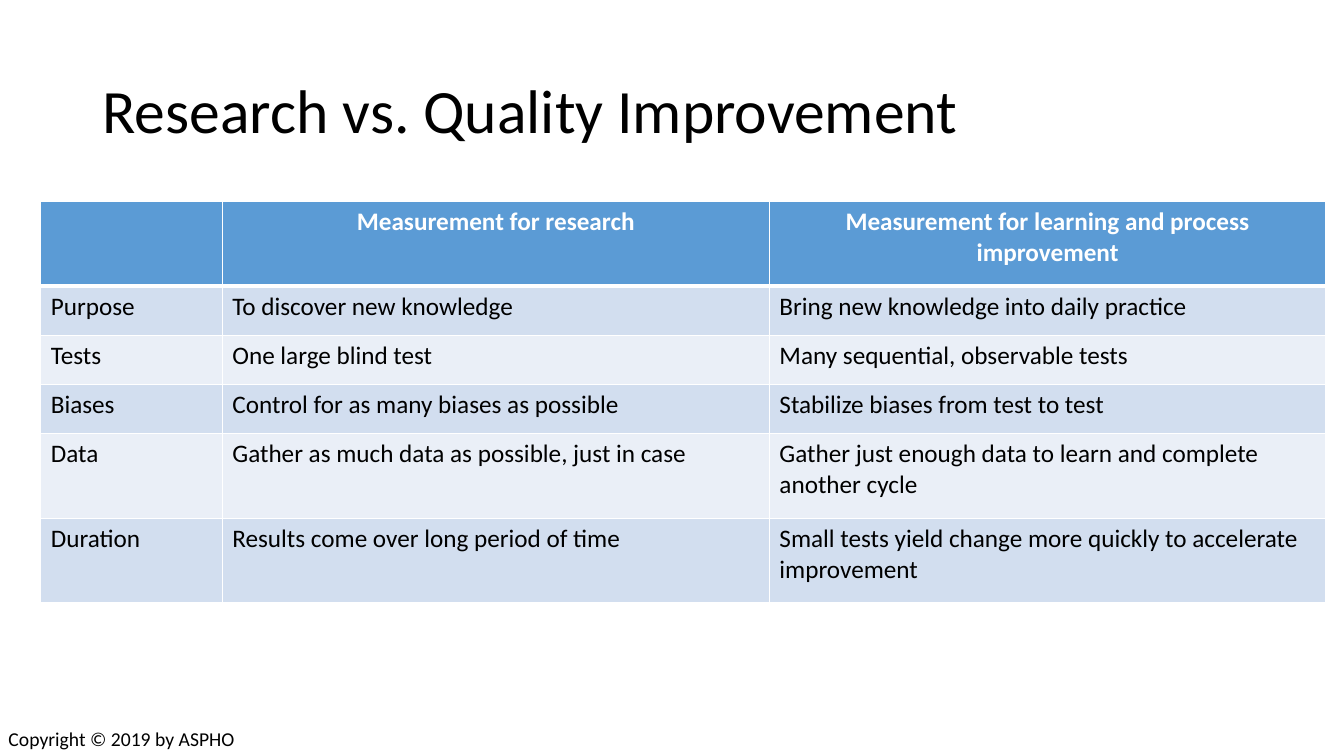
from dataclasses import dataclass

from lxml.etree import SubElement
from pptx import Presentation
from pptx.dml.color import RGBColor
from pptx.enum.text import MSO_ANCHOR, MSO_AUTO_SIZE, PP_ALIGN
from pptx.oxml.ns import qn
from pptx.slide import Slide
from pptx.table import _Cell
from pptx.text.text import _Paragraph
from pptx.util import Pt


@dataclass(frozen=True)
class Theme:
    font: str = "Calibri"
    text: str = "000000"
    header_text: str = "FFFFFF"
    header_fill: str = "5B9BD5"
    bands: tuple[str, str] = ("D2DEEF", "EAEFF7")
    border: str = "FFFFFF"
    title_size: float = 44
    table_size: float = 18
    footer_size: float = 14
    thin_border: float = 1
    thick_border: float = 3


@dataclass(frozen=True)
class Box:
    left: float
    top: float
    width: float
    height: float

    def lengths(self) -> tuple[Pt, Pt, Pt, Pt]:
        return Pt(self.left), Pt(self.top), Pt(self.width), Pt(self.height)


@dataclass(frozen=True)
class ComparisonRow:
    height: float
    aspect: str
    research: str
    improvement: str


THEME = Theme()
TITLE_BOX = Box(66, 28.8, 828, 104.4)
TABLE_BOX = Box(29.1, 144, 918, 287.2)
FOOTER_BOX = Box(-1, 515.7, 180, 24.3)
COLUMN_WIDTHS = (129.7, 390.8, 397.5)
ONE_LINE, TWO_LINES = 35.1, 60.5
ROWS = (
    ComparisonRow(TWO_LINES, "", "Measurement for research",
                  "Measurement for learning and process improvement"),
    ComparisonRow(ONE_LINE, "Purpose", "To discover new knowledge",
                  "Bring new knowledge into daily practice"),
    ComparisonRow(ONE_LINE, "Tests", "One large blind test",
                  "Many sequential, observable tests"),
    ComparisonRow(ONE_LINE, "Biases", "Control for as many biases as possible",
                  "Stabilize biases from test to test"),
    ComparisonRow(TWO_LINES, "Data", "Gather as much data as possible, just in case",
                  "Gather just enough data to learn and complete another cycle"),
    ComparisonRow(TWO_LINES, "Duration", "Results come over long period of time",
                  "Small tests yield change more quickly to accelerate improvement"),
)


def add_run(paragraph: _Paragraph, text: str, size: float,
            color: str = THEME.text, bold: bool = False) -> None:
    run = paragraph.add_run()
    run.text = text
    run.font.name = THEME.font
    run.font.size = Pt(size)
    run.font.bold = bold
    run.font.color.rgb = RGBColor.from_string(color)


def set_borders(cell: _Cell, top: float, bottom: float) -> None:
    properties = cell._tc.get_or_add_tcPr()
    thin = THEME.thin_border
    for side, width in (("L", thin), ("R", thin), ("T", top), ("B", bottom)):
        line = SubElement(properties, qn(f"a:ln{side}"), w=str(Pt(width)))
        fill = SubElement(line, qn("a:solidFill"))
        SubElement(fill, qn("a:srgbClr"), val=THEME.border)


def add_title(slide: Slide, text: str) -> None:
    title = slide.shapes.title
    title.left, title.top, title.width, title.height = TITLE_BOX.lengths()
    frame = title.text_frame
    frame.auto_size = MSO_AUTO_SIZE.NONE
    frame.vertical_anchor = MSO_ANCHOR.MIDDLE
    paragraph = frame.paragraphs[0]
    paragraph.alignment = PP_ALIGN.LEFT
    paragraph.line_spacing = 0.9
    add_run(paragraph, text, THEME.title_size)


def add_comparison_table(slide: Slide) -> None:
    table = slide.shapes.add_table(
        len(ROWS), len(COLUMN_WIDTHS), *TABLE_BOX.lengths()).table
    for column, width in zip(table.columns, COLUMN_WIDTHS):
        column.width = Pt(width)
    for row_index, row in enumerate(ROWS):
        table.rows[row_index].height = Pt(row.height)
        is_header = row_index == 0
        fill = THEME.header_fill if is_header else THEME.bands[(row_index - 1) % 2]
        color = THEME.header_text if is_header else THEME.text
        top = THEME.thick_border if row_index == 1 else THEME.thin_border
        bottom = THEME.thick_border if is_header else THEME.thin_border
        for column_index, text in enumerate((row.aspect, row.research, row.improvement)):
            cell = table.cell(row_index, column_index)
            set_borders(cell, top, bottom)
            cell.fill.solid()
            cell.fill.fore_color.rgb = RGBColor.from_string(fill)
            if text:
                paragraph = cell.text_frame.paragraphs[0]
                paragraph.alignment = PP_ALIGN.CENTER if is_header else PP_ALIGN.LEFT
                add_run(paragraph, text, THEME.table_size, color, is_header)


def add_footer(slide: Slide, text: str) -> None:
    frame = slide.shapes.add_textbox(*FOOTER_BOX.lengths()).text_frame
    frame.word_wrap = True
    frame.auto_size = MSO_AUTO_SIZE.SHAPE_TO_FIT_TEXT
    add_run(frame.paragraphs[0], text, THEME.footer_size)


def main() -> None:
    presentation = Presentation()
    presentation.slide_width = Pt(960)
    presentation.slide_height = Pt(540)
    title_only = presentation.slide_layouts.get_by_name("Title Only")
    slide = presentation.slides.add_slide(title_only)
    add_title(slide, "Research vs. Quality Improvement")
    add_comparison_table(slide)
    add_footer(slide, "Copyright © 2019 by ASPHO")
    presentation.save("out.pptx")


if __name__ == "__main__":
    main()
